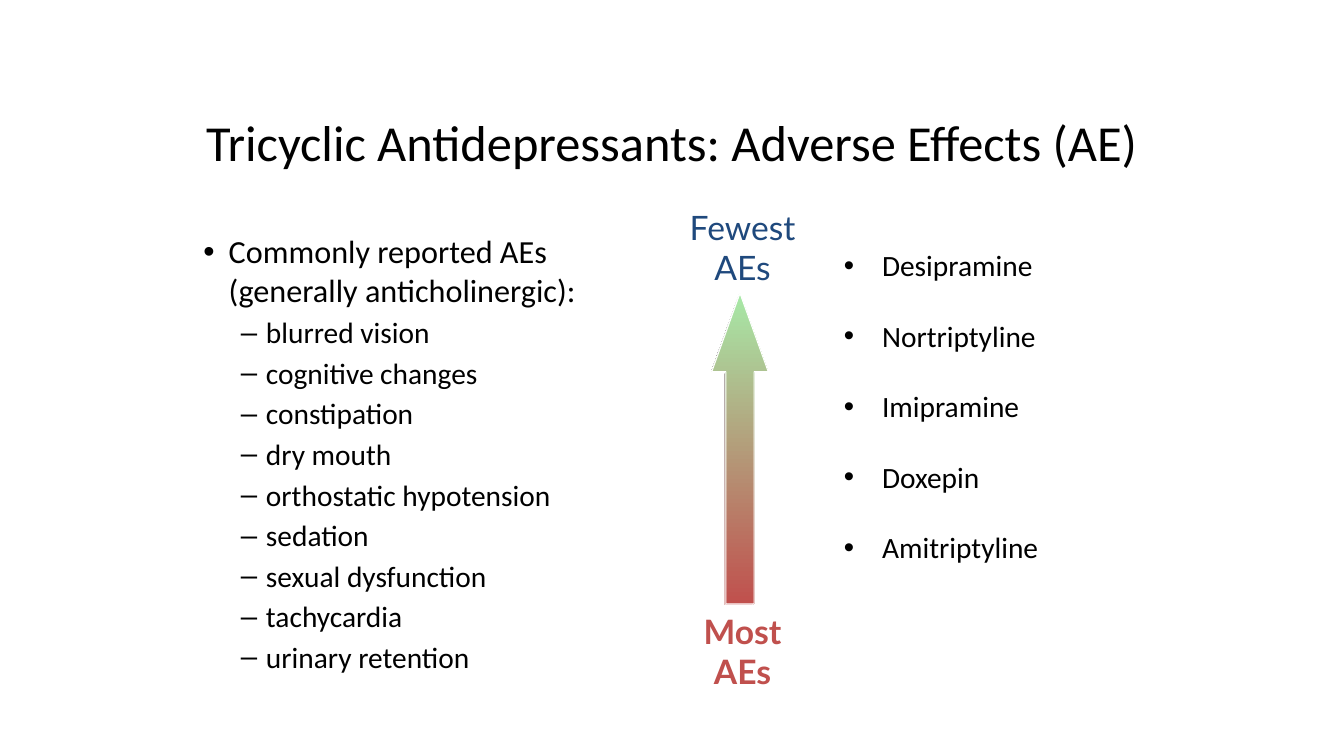
"""Build a slide on the adverse effects of tricyclic antidepressants."""
from dataclasses import dataclass

from pptx import Presentation
from pptx.dml.color import RGBColor as RGB
from pptx.enum.shapes import MSO_SHAPE as Shape
from pptx.enum.text import MSO_ANCHOR as Anchor, PP_ALIGN as Align
from pptx.oxml.ns import qn
from pptx.util import Inches, Pt


@dataclass(frozen=True)
class Theme:
    """Colours, fonts and type sizes of the slide."""
    ink: str = "000000"
    blue: str = "1F497D"
    red: str = "C0504D"
    green: str = "A7E9A7"
    white: str = "FFFFFF"
    body: str = "Calibri"
    label: str = "Lato"
    head: int = 36
    tag: int = 24
    lead: int = 23
    item: int = 21


THEME = Theme()

EFFECTS = ["blurred vision", "cognitive changes", "constipation", "dry mouth",
           "orthostatic hypotension", "sedation", "sexual dysfunction",
           "tachycardia", "urinary retention"]
DRUGS = ["Desipramine", "Nortriptyline", "Imipramine", "Doxepin",
         "Amitriptyline"]


def mark(para, sign, left, hang):
    """Give a paragraph a bullet with a hanging indent."""
    props = para._p.get_or_add_pPr()
    props.set("marL", str(Inches(left)))
    props.set("indent", str(-Inches(hang)))
    font = props.makeelement(qn("a:buFont"), {"typeface": "Arial"})
    props.append(font)
    props.append(props.makeelement(qn("a:buChar"), {"char": sign}))


def write(frame, text, size=THEME.item, font=THEME.body, color=THEME.ink,
          bold=False, align=Align.LEFT, bullet=None, level=0, gap=0,
          line=None):
    """Add one formatted paragraph to a text frame."""
    first = not frame.text
    para = frame.paragraphs[0] if first else frame.add_paragraph()
    para.text = text
    if bullet:
        mark(para, *bullet)
    para.level = level
    para.alignment = align
    para.space_before = Pt(0 if first else gap)
    if line:
        para.line_spacing = line
    for run in para.runs:
        run.font.name = font
        run.font.size = Pt(size)
        run.font.bold = bold
        run.font.color.rgb = RGB.from_string(color)


def add_box(slide, *place):
    """Add a wrapping text box and return its frame."""
    box = slide.shapes.add_textbox(*map(Inches, place))
    box.text_frame.word_wrap = True
    return box.text_frame


def add_title(slide, text):
    """Place and fill the title."""
    title = slide.shapes.title
    title.left, title.top = Inches(0), Inches(0.83)
    title.width, title.height = Inches(13.33), Inches(1.15)
    title.text_frame.vertical_anchor = Anchor.MIDDLE
    write(title.text_frame, text, size=THEME.head, align=Align.CENTER)


def add_tag(slide, text, top, **style):
    """Add a label at one end of the arrow."""
    frame = add_box(slide, 6.66, top, 1.41, 0.91)
    write(frame, text, size=THEME.tag, font=THEME.label,
          align=Align.CENTER, **style)


def add_arrow(slide, left, top, start):
    """Add an upward arrow that fades from its tip to red."""
    arrow = slide.shapes.add_shape(
        Shape.UP_ARROW, Inches(left), Inches(top), Inches(0.56), Inches(3.08))
    arrow.shadow.inherit = False
    arrow.adjustments[0] = 0.5
    arrow.adjustments[1] = 1.39
    arrow.fill.gradient()
    arrow.fill.gradient_angle = 270
    for stop, color in zip(arrow.fill.gradient_stops, (start, THEME.red)):
        stop.color.rgb = RGB.from_string(color)
    arrow.line.color.rgb = RGB.from_string(THEME.white)
    arrow.line.width = Pt(0.75)


def main():
    """Build and save the slide."""
    deck = Presentation()
    deck.slide_width, deck.slide_height = Inches(13.33), Inches(7.5)
    slide = deck.slides.add_slide(deck.slide_layouts[5])
    add_title(slide, "Tricyclic Antidepressants: Adverse Effects (AE)")

    left = add_box(slide, 1.92, 2.25, 4.76, 4.92)
    write(left, "Commonly reported AEs (generally anticholinergic):",
          size=THEME.lead, bullet=("•", 0.25, 0.25))
    for name in EFFECTS:
        write(left, name, bullet=("–", 0.62, 0.25), level=1, gap=3.8)

    right = add_box(slide, 8.27, 2.23, 2.92, 4.76)
    for name in DRUGS:
        write(right, name, bullet=("•", 0.38, 0.38), gap=12.6, line=1.5)

    add_tag(slide, "Fewest\vAEs", 2, color=THEME.blue)
    add_tag(slide, "Most AEs", 6.01, color=THEME.red, bold=True)
    add_arrow(slide, 7.05, 2.92, THEME.ink)
    add_arrow(slide, 7.06, 2.91, THEME.green)
    deck.save("out.pptx")


if __name__ == "__main__":
    main()
